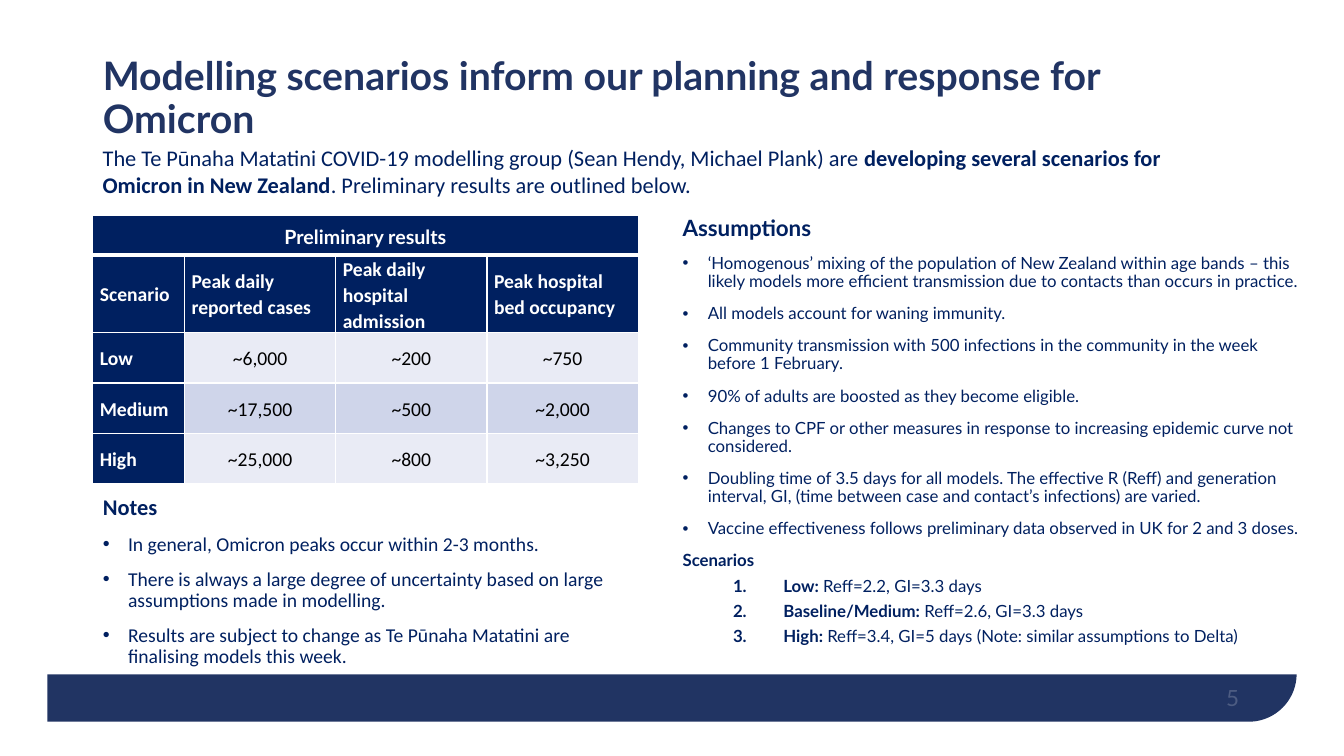
import pptx
import pptx.util
import pptx.dml.color
import pptx.enum.shapes
import pptx.enum.text
import pptx.oxml
import pptx.oxml.ns

Inches = pptx.util.Inches
Pt = pptx.util.Pt
ALIGN = pptx.enum.text.PP_ALIGN
ANCHOR = pptx.enum.text.MSO_ANCHOR
SHAPE = pptx.enum.shapes.MSO_SHAPE
NS = pptx.oxml.ns.nsdecls("a")
NAVY, BAR, WHITE, BLACK = "002060", "213463", "FFFFFF", "000000"


def rgb(value):
    return pptx.dml.color.RGBColor.from_string(value)


def add_text(p, text, size=12, font="Lato", color=NAVY, bold=False):
    r = p.add_run()
    r.text = text
    r.font.size = Pt(size)
    r.font.name = font
    r.font.bold = bold
    r.font.color.rgb = rgb(color)
    return r


prs = pptx.Presentation()
prs.slide_width, prs.slide_height = Inches(13.33), Inches(7.5)
s = prs.slides.add_slide(prs.slide_layouts[3])
title, notes, assumptions = s.placeholders

# Backdrop behind the text: rounded navy panel, then the white page that leaves its foot as a bar
for layer, (kind, box, color) in enumerate([
    (SHAPE.ROUND_1_RECTANGLE, (0.47, 0.37, 12.39, 6.79), BAR),
    (SHAPE.RECTANGLE, (0, 0, 13.33, 6.69), WHITE),
]):
    sp = s.shapes.add_shape(kind, *(Inches(v) for v in box))
    sp.shadow.inherit = False
    sp.fill.solid()
    sp.fill.fore_color.rgb = rgb(color)
    sp.line.fill.background()
    if kind == SHAPE.ROUND_1_RECTANGLE:
        sp.adjustments[0] = 0.07
        sp.rotation = 180
        sp._element.spPr.find(pptx.oxml.ns.qn("a:xfrm")).set("flipH", "1")
    s.shapes._spTree.insert(2 + layer, sp._element)

# Slide number
tf = s.shapes.add_textbox(Inches(9.29), Inches(6.65), Inches(3), Inches(0.4)).text_frame
tf.word_wrap = True
tf.vertical_anchor = ANCHOR.BOTTOM
tf.margin_left = tf.margin_right = tf.margin_top = tf.margin_bottom = 0
tf.paragraphs[0].alignment = ALIGN.RIGHT
r = add_text(tf.paragraphs[0], "5", size=16, color=WHITE)
fill_color = r.font.fill._xPr.find(".//" + pptx.oxml.ns.qn("a:srgbClr"))
fill_color.append(pptx.oxml.parse_xml(f'<a:alpha {NS} val="20000"/>'))

# Title
title.left, title.top, title.width, title.height = (Inches(v) for v in (0.92, 0.4, 10.43, 1.17))
tf = title.text_frame
tf.auto_size = pptx.enum.text.MSO_AUTO_SIZE.NONE
tf.vertical_anchor = ANCHOR.MIDDLE
p = tf.paragraphs[0]
p.alignment = ALIGN.LEFT
p.line_spacing = 0.9
add_text(p, "Modelling scenarios inform our planning and response for Omicron",
         size=28, color=BAR, bold=True)

# Introduction
tf = s.shapes.add_textbox(Inches(0.92), Inches(1.38), Inches(11.03), Inches(0.64)).text_frame
tf.word_wrap = True
for text, bold in [
    ("The Te Pūnaha Matatini COVID-19 modelling group (Sean Hendy, Michael Plank) are ", False),
    ("developing several scenarios for Omicron in New Zealand", True),
    (". Preliminary results are outlined below.", False),
]:
    add_text(tf.paragraphs[0], text, size=16, font="Calibri", bold=bold)

# Results table
rows = [
    ["Preliminary results", "", "", ""],
    ["Scenario", "Peak daily reported cases", "Peak daily hospital admission", "Peak hospital bed occupancy"],
    ["Low", "~6,000", "~200", "~750"],
    ["Medium", "~17,500", "~500", "~2,000"],
    ["High", "~25,000", "~800", "~3,250"],
]
table = s.shapes.add_table(5, 4, Inches(0.92), Inches(2.14), Inches(5.41), Inches(2.43)).table
for column, width in zip(table.columns, [0.91, 1.5, 1.5, 1.5]):
    column.width = Inches(width)
for row, height in zip(table.rows, [0.39, 0.54, 0.5, 0.5, 0.5]):
    row.height = Inches(height)
table.cell(0, 0).merge(table.cell(0, 3))
for i, row in enumerate(rows):
    for j, text in enumerate(row):
        cell = table.cell(i, j)
        heading = i < 2 or j == 0
        cell.vertical_anchor = ANCHOR.MIDDLE
        cell.margin_left = cell.margin_right = Inches(0.07)
        cell.margin_top = cell.margin_bottom = 0
        for side in "LRTB":
            thick = (i == 0 and side == "B") or (i == 1 and side == "T")
            cell._tc.get_or_add_tcPr().append(pptx.oxml.parse_xml(
                f'<a:ln{side} {NS} w="{Pt(3 if thick else 1)}"><a:solidFill>'
                f'<a:srgbClr val="{WHITE}"/></a:solidFill></a:ln{side}>'))
        cell.fill.solid()
        cell.fill.fore_color.rgb = rgb(NAVY if heading else "CFD5EA" if i == 3 else "E9EBF5")
        if text:
            p = cell.text_frame.paragraphs[0]
            p.alignment = ALIGN.CENTER if i == 0 or not heading else ALIGN.LEFT
            p.line_spacing = 1.1
            p.space_after = Pt(6)
            add_text(p, text, size=14, font="Lato" if i == 0 else "Calibri",
                     color=WHITE if heading else BLACK, bold=heading)

# Assumptions and notes: each line is its kind, then plain text or a bold lead and plain text
assumption_lines = [
    ("heading", "Assumptions"),
    ("bullet", "‘Homogenous’ mixing of the population of New Zealand within age bands – this likely "
               "models more efficient transmission due to contacts than occurs in practice."),
    ("bullet", "All models account for waning immunity."),
    ("bullet", "Community transmission with 500 infections in the community in the week before 1 February."),
    ("bullet", "90% of adults are boosted as they become eligible."),
    ("bullet", "Changes to CPF or other measures in response to increasing epidemic curve not considered."),
    ("bullet", "Doubling time of 3.5 days for all models. The effective R (Reff) and generation interval, "
               "GI, (time between case and contact’s infections) are varied."),
    ("bullet", "Vaccine effectiveness follows preliminary data observed in UK for 2 and 3 doses."),
    ("subheading", "Scenarios"),
    ("number", "Low: ", "Reff=2.2, GI=3.3 days"),
    ("number", "Baseline/Medium: ", "Reff=2.6, GI=3.3 days"),
    ("number", "High: ", "Reff=3.4, GI=5 days (Note: similar assumptions to Delta)"),
]
note_lines = [
    ("heading", "Notes"),
    ("bullet", "In general, Omicron peaks occur within 2-3 months."),
    ("bullet", "There is always a large degree of uncertainty based on large assumptions made in modelling."),
    ("bullet", "Results are subject to change as Te Pūnaha Matatini are finalising models this week."),
]
no_mark = [f"<a:buNone {NS}/>"]
marks = {  # left margin, hanging indent, bullet elements
    "heading": (0, 0, no_mark),
    "subheading": (0, 0, no_mark),
    "bullet": (0.25, -0.25, [f'<a:buFont {NS} typeface="Arial"/>', f'<a:buChar {NS} char="•"/>']),
    "number": (1, -0.5, [f'<a:buFont {NS} typeface="+mj-lt"/>',
                         f'<a:buAutoNum {NS} type="arabicPeriod"/>']),
}
for body, box, lines, font, size in [
    (assumptions, (6.67, 2.1, 6.4, 3.56), assumption_lines, "Lato", 12),
    (notes, (0.92, 4.87, 5.41, 0.64), note_lines, "Calibri", 14),
]:
    body.left, body.top, body.width, body.height = (Inches(v) for v in box)
    tf = body.text_frame
    tf.auto_size = pptx.enum.text.MSO_AUTO_SIZE.NONE
    tf.vertical_anchor = ANCHOR.TOP
    for n, (kind, *parts) in enumerate(lines):
        p = tf.add_paragraph() if n else tf.paragraphs[0]
        margin, indent, elements = marks[kind]
        p.level = 1 if kind == "number" else 0
        pPr = p._p.get_or_add_pPr()
        pPr.set("marL", str(Inches(margin)))
        pPr.set("indent", str(Inches(indent)))
        for element in elements:
            pPr.append(pptx.oxml.parse_xml(element))
        p.line_spacing = 0.9
        p.space_before = Pt(0 if n == 0 else 5 if kind == "number" else 10)
        for k, text in enumerate(parts):
            add_text(p, text, size=16 if kind == "heading" else size, font=font,
                     bold=kind != "bullet" and k == 0)

prs.save("out.pptx")
